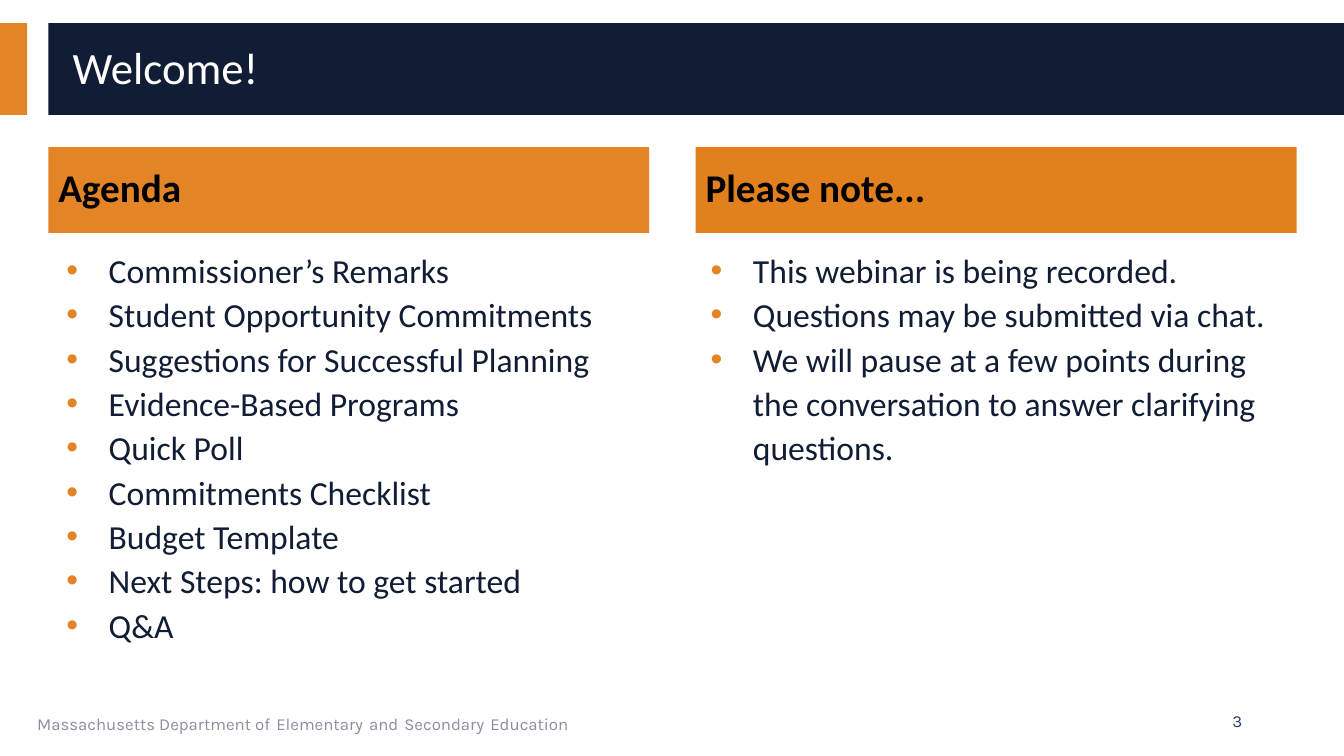
import pptx
import pptx.dml.color
import pptx.enum.shapes
import pptx.enum.text
import pptx.oxml
import pptx.oxml.ns
import pptx.util
from pptx.util import Inches

NAVY = pptx.dml.color.RGBColor(0x10, 0x1D, 0x34)
BLUE = pptx.dml.color.RGBColor(0x20, 0x3B, 0x6A)
ORANGE = pptx.dml.color.RGBColor(0xE3, 0x85, 0x26)
DEEP_ORANGE = pptx.dml.color.RGBColor(0xE2, 0x80, 0x1E)
GRAY = pptx.dml.color.RGBColor(0x8A, 0x8F, 0xA0)
WHITE = pptx.dml.color.RGBColor(0xFF, 0xFF, 0xFF)
BLACK = pptx.dml.color.RGBColor(0, 0, 0)

LEFT = pptx.enum.text.PP_ALIGN.LEFT
RIGHT = pptx.enum.text.PP_ALIGN.RIGHT
TOP = pptx.enum.text.MSO_ANCHOR.TOP
MIDDLE = pptx.enum.text.MSO_ANCHOR.MIDDLE

AGENDA = [
    "Commissioner’s Remarks",
    "Student Opportunity Commitments",
    "Suggestions for Successful Planning",
    "Evidence-Based Programs",
    "Quick Poll",
    "Commitments Checklist",
    "Budget Template",
    "Next Steps: how to get started",
    "Q&A",
]
NOTES = [
    "This webinar is being recorded.",
    "Questions may be submitted via chat.",
    "We will pause at a few points during the conversation to answer "
    "clarifying questions.",
]
FOOTER_WORDS = ["Massachusetts Department of", "Elementary", "and",
                "Secondary", "Education"]


def format_run(run, size, color, name="Calibri", bold=False):
    run.font.size = pptx.util.Pt(size)
    run.font.color.rgb = color
    run.font.name = name
    run.font.bold = bold


def format_paragraph(paragraph, size, color, name="Calibri", bold=False,
                     align=LEFT, spacing=None):
    paragraph.alignment = align
    paragraph.line_spacing = spacing
    for run in paragraph.runs:
        format_run(run, size, color, name, bold)


def add_bar(slide, left, top, width, height, color):
    bar = slide.shapes.add_shape(
        pptx.enum.shapes.MSO_SHAPE.RECTANGLE,
        Inches(left), Inches(top), Inches(width), Inches(height))
    bar.shadow.inherit = False
    bar.fill.solid()
    bar.fill.fore_color.rgb = color
    bar.line.fill.background()
    return bar


def add_text_box(slide, left, top, width, height, anchor=TOP):
    box = slide.shapes.add_textbox(
        Inches(left), Inches(top), Inches(width), Inches(height))
    box.text_frame.word_wrap = True
    box.text_frame.vertical_anchor = anchor
    return box.text_frame


def add_bullet(paragraph, color):
    properties = paragraph._p.get_or_add_pPr()
    properties.set("marL", str(Inches(0.5)))
    properties.set("indent", str(Inches(-0.42)))
    namespace = pptx.oxml.ns.nsdecls("a")
    for markup in (
            f'<a:buClr {namespace}><a:srgbClr val="{color}"/></a:buClr>',
            f'<a:buFont {namespace} typeface="Arial"/>',
            f'<a:buChar {namespace} char="•"/>'):
        properties.append(pptx.oxml.parse_xml(markup))


def add_header(slide, left, top, width, height):
    # Orange tab and navy band
    add_bar(slide, left, top, 0.27, height, ORANGE)
    add_bar(slide, left + 0.48, top, width - 0.48, height, NAVY)

    # Title, brought in front of the band
    title = slide.shapes.title
    title.element.getparent().append(title.element)
    title.left, title.top = Inches(left + 0.62), Inches(top + 0.09)
    title.width, title.height = Inches(12.5), Inches(0.74)
    title.text_frame.text = "Welcome!"
    title.text_frame.vertical_anchor = MIDDLE
    format_paragraph(title.text_frame.paragraphs[0], 32, WHITE, spacing=0.9)


def add_column(slide, left, top, width, heading, color, items, list_left):
    # Heading bar
    bar = add_bar(slide, left, top, width, 0.85, color)
    bar.text_frame.text = heading
    bar.text_frame.vertical_anchor = MIDDLE
    format_paragraph(bar.text_frame.paragraphs[0], 28, BLACK, bold=True,
                     spacing=0.9)

    # Bulleted list
    frame = add_text_box(slide, list_left, top + 0.93, width, 4.15)
    frame.text = "\n".join(items)
    for paragraph in frame.paragraphs:
        add_bullet(paragraph, ORANGE)
        format_paragraph(paragraph, 24, NAVY, spacing=1.1)


def add_footer(slide, left, top, height):
    # Department name, with wider gaps between the words
    paragraph = add_text_box(slide, left, top, 8.44, height).paragraphs[0]
    for index, word in enumerate(FOOTER_WORDS):
        if index:
            gap = paragraph.add_run()
            gap.text = " "
            format_run(gap, 18, BLUE, "Karla")
        run = paragraph.add_run()
        run.text = word
        format_run(run, 12, GRAY, "Karla")

    # Slide number
    frame = add_text_box(slide, left + 9.15, top, 3, height, MIDDLE)
    frame.text = "3"
    format_paragraph(frame.paragraphs[0], 12, BLUE, "Karla", align=RIGHT)


def main():
    presentation = pptx.Presentation()
    presentation.slide_width = Inches(13.33)
    presentation.slide_height = Inches(7.5)
    slide = presentation.slides.add_slide(presentation.slide_layouts[5])

    add_header(slide, 0, 0.23, 13.33, 0.91)
    add_column(slide, 0.48, 1.46, 5.96, "Agenda", ORANGE, AGENDA, 0.48)
    add_column(slide, 6.9, 1.46, 5.96, "Please note...", DEEP_ORANGE, NOTES,
               6.87)
    add_footer(slide, 0.27, 6.95, 0.4)

    presentation.save("out.pptx")


if __name__ == "__main__":
    main()
